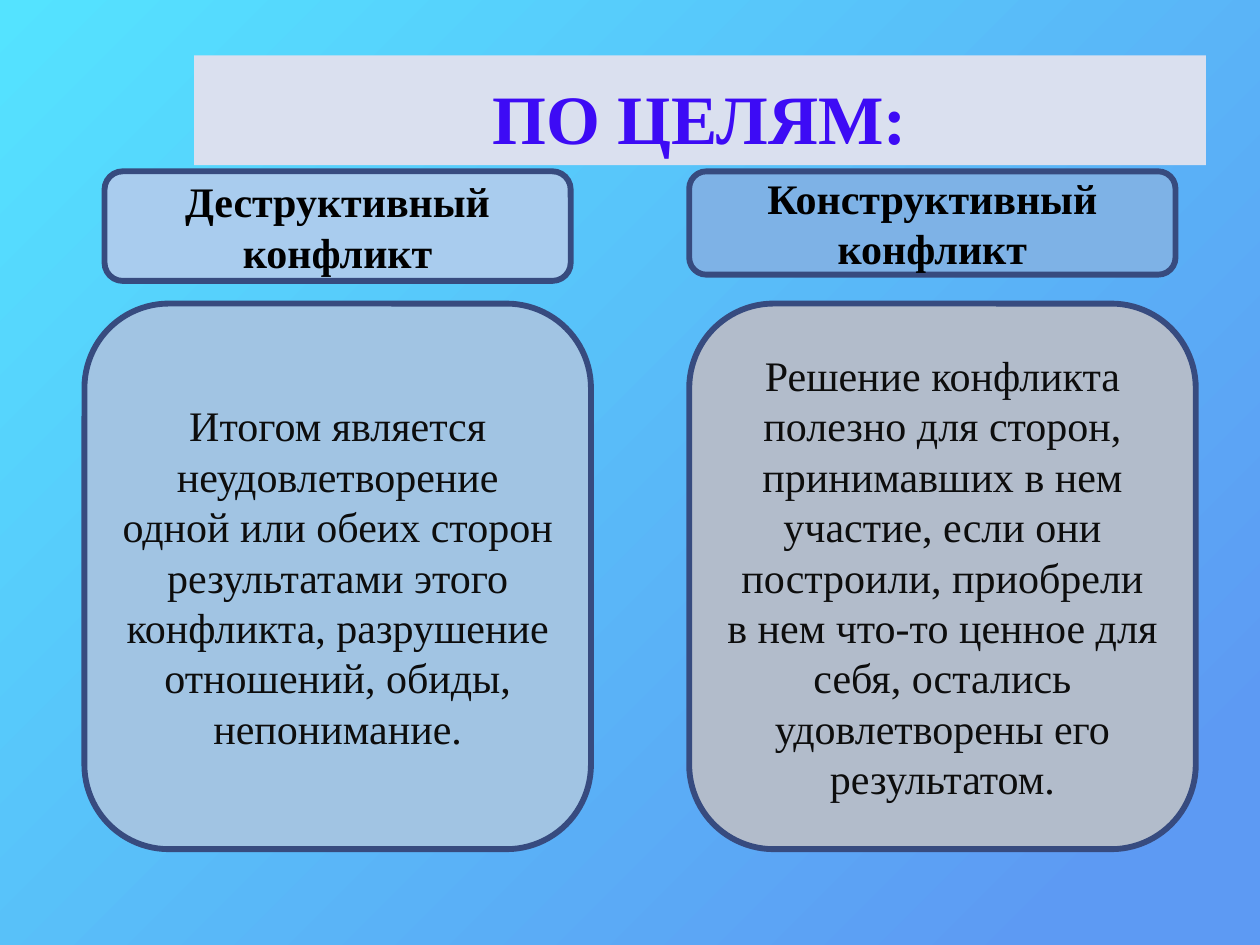
from dataclasses import dataclass

from lxml.etree import SubElement
from pptx import Presentation
from pptx.dml.color import RGBColor
from pptx.enum.shapes import MSO_SHAPE
from pptx.enum.text import MSO_ANCHOR, MSO_AUTO_SIZE, PP_ALIGN
from pptx.oxml.ns import qn
from pptx.util import Inches, Pt


@dataclass(frozen=True)
class Theme:
    font: str = "Times New Roman"
    title_size: float = 39.6
    text_size: float = 24
    line_width: float = 3.35
    title_text: str = "3D0BF5"
    title_fill: str = "DAE0EF"
    heading_text: str = "000000"
    body_text: str = "0D0D0D"
    outline: str = "374B7F"
    gradient: tuple = ((0.1, "5D9AF3"), (1, "54E3FF"))


class SlideBuilder:
    def __init__(self, slide, theme):
        self.s = slide
        self.theme = theme

    def background(self):
        """Radial gradient spreading from the bottom right corner."""
        fill = self.s.background.fill
        fill.gradient()
        for stop, (position, color) in zip(fill.gradient_stops, self.theme.gradient):
            stop.position = position
            stop.color.rgb = RGBColor.from_string(color)
        grad = next(self.s.element.iter(qn("a:gradFill")))
        grad.remove(grad.find(qn("a:lin")))
        radial = SubElement(grad, qn("a:path"), {"path": "circle"})
        SubElement(radial, qn("a:fillToRect"), {"l": "100000", "t": "100000"})

    def set_text(self, sp, text, size, color, bold, anchor):
        tf = sp.text_frame
        tf.text = text
        tf.word_wrap = True
        tf.auto_size = MSO_AUTO_SIZE.NONE
        tf.vertical_anchor = anchor
        p = tf.paragraphs[0]
        p.alignment = PP_ALIGN.CENTER
        p.font.name = self.theme.font
        p.font.size = Pt(size)
        p.font.bold = bold
        p.font.color.rgb = RGBColor.from_string(color)

    def set_fill(self, sp, color):
        sp.fill.solid()
        sp.fill.fore_color.rgb = RGBColor.from_string(color)

    def title(self, text, left, top, width, height):
        sp = self.s.shapes.title
        sp.left, sp.top = Inches(left), Inches(top)
        sp.width, sp.height = Inches(width), Inches(height)
        self.set_fill(sp, self.theme.title_fill)
        self.set_text(sp, text, self.theme.title_size, self.theme.title_text,
                      True, MSO_ANCHOR.BOTTOM)

    def card(self, text, left, top, width, height, color, heading=False):
        sp = self.s.shapes.add_shape(
            MSO_SHAPE.ROUNDED_RECTANGLE,
            Inches(left), Inches(top), Inches(width), Inches(height))
        sp.shadow.inherit = False
        self.set_fill(sp, color)
        sp.line.color.rgb = RGBColor.from_string(self.theme.outline)
        sp.line.width = Pt(self.theme.line_width)
        text_color = self.theme.heading_text if heading else self.theme.body_text
        self.set_text(sp, text, self.theme.text_size, text_color, heading,
                      MSO_ANCHOR.MIDDLE)


def main():
    prs = Presentation()
    prs.slide_width, prs.slide_height = Inches(10), Inches(7.5)
    title_only = prs.slide_layouts[5]
    slide = SlideBuilder(prs.slides.add_slide(title_only), Theme())

    slide.background()
    slide.title("ПО ЦЕЛЯМ:", 1.54, 0.44, 8.03, 0.87)

    body_top, body_width, body_height = 2.41, 4.02, 4.33
    slide.card("Итогом является неудовлетворение одной или обеих сторон "
               "результатами этого конфликта, разрушение отношений, обиды, "
               "непонимание.",
               0.67, body_top, body_width, body_height, "A1C4E3")
    slide.card("Решение конфликта полезно для сторон, принимавших в нем участие, "
               "если они построили, приобрели в нем что-то ценное для себя, "
               "остались удовлетворены его результатом.",
               5.47, body_top, body_width, body_height, "B2BCCB")

    heading_top = 1.36
    slide.card("Конструктивный конфликт", 5.47, heading_top, 3.86, 0.82,
               "7EB2E6", heading=True)
    slide.card("Деструктивный конфликт", 0.83, heading_top, 3.7, 0.87,
               "A9CCEE", heading=True)

    prs.save("out.pptx")


if __name__ == "__main__":
    main()
